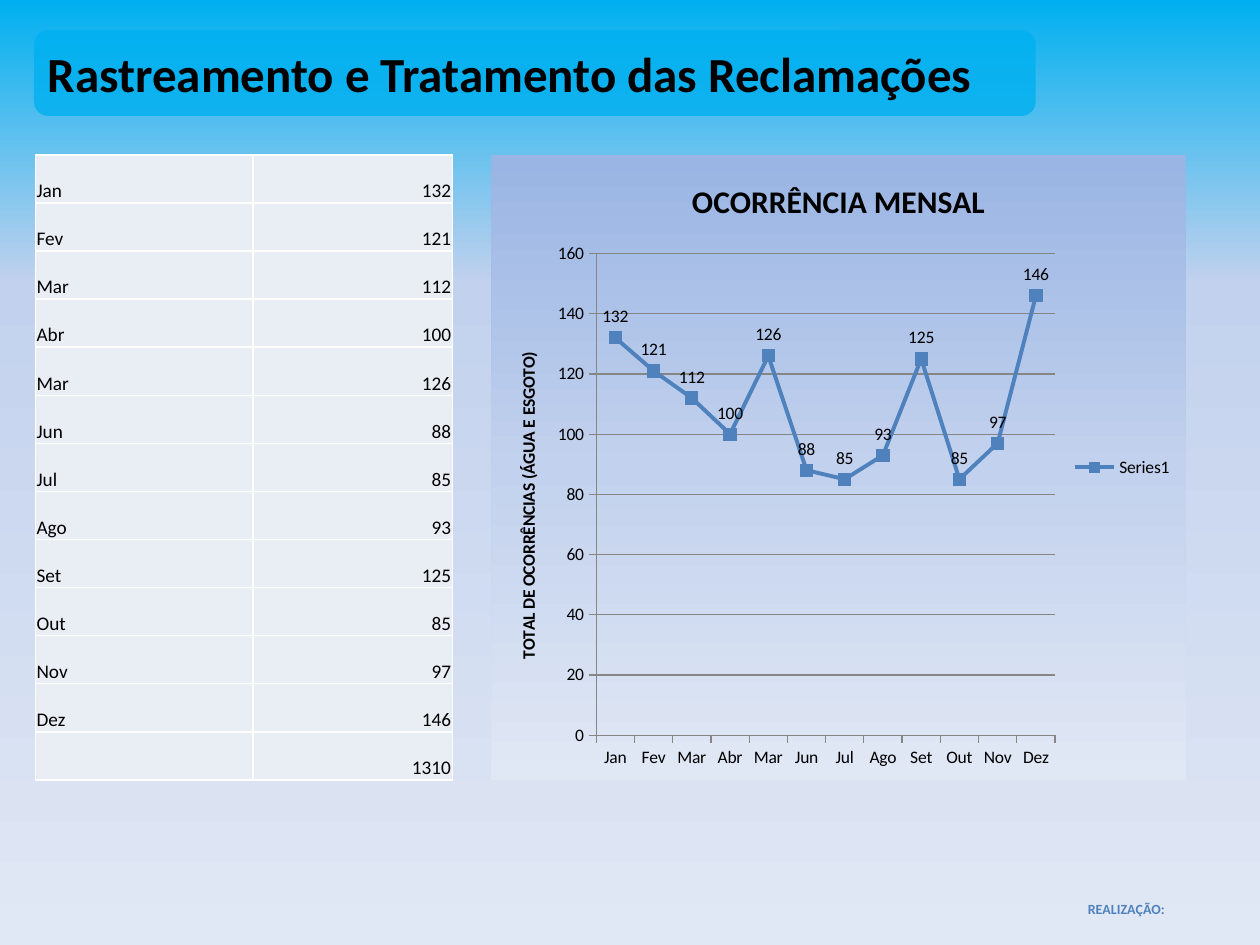
"""Build the monthly complaints slide with its table and line chart."""
from dataclasses import dataclass

from lxml import etree
from pptx import Presentation
from pptx.chart.data import CategoryChartData
from pptx.dml.color import RGBColor
from pptx.enum.chart import XL_CHART_TYPE as ChartType
from pptx.enum.chart import XL_LABEL_POSITION as LabelPos
from pptx.enum.chart import XL_LEGEND_POSITION as LegendPos
from pptx.enum.chart import XL_MARKER_STYLE as Marker
from pptx.enum.chart import XL_TICK_MARK as Tick
from pptx.enum.shapes import MSO_SHAPE as Shape
from pptx.enum.text import MSO_ANCHOR as Anchor
from pptx.enum.text import PP_ALIGN as Align
from pptx.oxml import parse_xml
from pptx.oxml.ns import nsdecls, qn
from pptx.util import Inches, Pt

MONTHS = ["Jan", "Fev", "Mar", "Abr", "Mar", "Jun",
          "Jul", "Ago", "Set", "Out", "Nov", "Dez"]
COMPLAINTS = [132, 121, 112, 100, 126, 88, 85, 93, 125, 85, 97, 146]


@dataclass(frozen=True)
class Theme:
    font: str = "Calibri"
    ink: str = "000000"
    banner: str = "00B0F0"
    accent: str = "4F81BD"
    cell: str = "E9EDF4"
    border: str = "FFFFFF"
    axis: str = "868686"
    page: tuple = ((0, "00B0F0"), (30, "C2D1ED"), (100, "E1E8F5"))
    panel: tuple = ((0, "9AB5E4"), (50, "C2D1ED"), (100, "E1E8F5"))
    title_size: int = 28
    chart_title_size: int = 18
    cell_size: int = 11
    chart_size: int = 10
    credit_size: int = 8


def gradient(stops):
    marks = "".join(f'<a:gs pos="{position * 1000}"><a:srgbClr val="{color}"/></a:gs>'
                    for position, color in stops)
    return (f'<a:gradFill {nsdecls("a")} rotWithShape="1"><a:gsLst>{marks}</a:gsLst>'
            '<a:lin ang="5400000" scaled="0"/></a:gradFill>')


class SlideBuilder:
    def __init__(self, slide, theme):
        self.slide, self.theme = slide, theme

    def style(self, font, size, bold=False, color=None):
        font.name, font.size, font.bold = self.theme.font, Pt(size), bold
        font.color.rgb = RGBColor.from_string(color or self.theme.ink)

    def background(self):
        fill = self.slide.background.fill
        fill.solid()
        solid = self.slide.element.find(f".//{qn('p:bgPr')}/{qn('a:solidFill')}")
        solid.getparent().replace(solid, parse_xml(gradient(self.theme.page)))

    def banner(self, *box, opacity):
        banner = self.slide.shapes.add_shape(Shape.ROUNDED_RECTANGLE, *map(Inches, box))
        banner.shadow.inherit = False
        banner.fill.solid()
        banner.fill.fore_color.rgb = RGBColor.from_string(self.theme.banner)
        color = banner.element.spPr.find(f".//{qn('a:srgbClr')}")
        etree.SubElement(color, qn("a:alpha"), val=str(opacity * 1000))
        banner.line.fill.background()

    def title(self, text, *box):
        title = self.slide.shapes.title
        title.left, title.top, title.width, title.height = map(Inches, box)
        frame = title.text_frame
        frame.text = text
        frame.vertical_anchor = Anchor.MIDDLE
        paragraph = frame.paragraphs[0]
        paragraph.alignment = Align.LEFT
        self.style(paragraph.runs[0].font, self.theme.title_size, bold=True)
        title.element.getparent().append(title.element)

    def credit(self, text, *box):
        frame = self.slide.shapes.add_textbox(*map(Inches, box)).text_frame
        frame.word_wrap = True
        frame.text = text
        paragraph = frame.paragraphs[0]
        paragraph.alignment = Align.CENTER
        self.style(paragraph.runs[0].font, self.theme.credit_size, True, self.theme.accent)

    def cell(self, cell, text, alignment):
        cell.margin_left = cell.margin_top = cell.margin_right = Inches(0.01)
        cell.margin_bottom = 0
        cell.vertical_anchor = Anchor.BOTTOM
        cell.fill.solid()
        cell.fill.fore_color.rgb = RGBColor.from_string(self.theme.cell)
        properties = cell._tc.get_or_add_tcPr()
        for index, side in enumerate(("lnL", "lnR", "lnT", "lnB")):
            properties.insert(index, parse_xml(
                f'<a:{side} {nsdecls("a")} w="{Pt(1)}"><a:solidFill>'
                f'<a:srgbClr val="{self.theme.border}"/></a:solidFill></a:{side}>'))
        cell.text_frame.text = text
        paragraph = cell.text_frame.paragraphs[0]
        paragraph.alignment = alignment
        for run in paragraph.runs:
            self.style(run.font, self.theme.cell_size)

    def table(self, rows, widths, *box):
        table = self.slide.shapes.add_table(len(rows), len(widths), *map(Inches, box)).table
        table.first_row = table.horz_banding = False
        for column, width in zip(table.columns, widths):
            column.width = Inches(width)
        for row, (month, count) in zip(table.rows, rows):
            row.height = Inches(box[3] / len(rows))
            self.cell(row.cells[0], month, Align.LEFT)
            self.cell(row.cells[1], str(count), Align.RIGHT)

    def heading(self, owner, text, size):
        frame = owner.text_frame
        frame.text = text
        self.style(frame.paragraphs[0].runs[0].font, size, bold=True)

    def axis_line(self, line):
        line.color.rgb = RGBColor.from_string(self.theme.axis)
        line.width = Pt(0.75)

    def line_chart(self, title, axis_title, *box):
        data = CategoryChartData()
        data.categories = MONTHS
        data.add_series("Series1", COMPLAINTS)
        chart = self.slide.shapes.add_chart(
            ChartType.LINE_MARKERS, *map(Inches, box), data).chart
        self.style(chart.font, self.theme.chart_size)
        chart.element.find(qn("c:txPr")).addprevious(parse_xml(
            f'<c:spPr {nsdecls("c", "a")}>{gradient(self.theme.panel)}'
            '<a:ln><a:noFill/></a:ln></c:spPr>'))
        chart.has_title = True
        self.heading(chart.chart_title, title, self.theme.chart_title_size)
        chart.has_legend = True
        chart.legend.position = LegendPos.RIGHT
        chart.legend.include_in_layout = False

        for axis in (chart.category_axis, chart.value_axis):
            axis.major_tick_mark, axis.minor_tick_mark = Tick.OUTSIDE, Tick.NONE
            self.axis_line(axis.format.line)
        counts = chart.value_axis
        counts.minimum_scale, counts.maximum_scale, counts.major_unit = 0, 160, 20
        counts.has_major_gridlines = True
        self.axis_line(counts.major_gridlines.format.line)
        self.heading(counts.axis_title, axis_title, self.theme.chart_size)

        plot = chart.plots[0]
        plot.vary_by_categories = False
        series = plot.series[0]
        series.smooth = False
        accent = RGBColor.from_string(self.theme.accent)
        series.format.line.color.rgb = accent
        series.format.line.width = Pt(2.25)
        series.marker.style, series.marker.size = Marker.SQUARE, 7
        series.marker.format.fill.solid()
        series.marker.format.fill.fore_color.rgb = accent
        series.marker.format.line.color.rgb = accent
        labels = series.data_labels
        labels.show_value, labels.position = True, LabelPos.ABOVE
        self.style(labels.font, self.theme.chart_size)


def main():
    deck = Presentation()
    deck.slide_width, deck.slide_height = Inches(10), Inches(7.5)
    builder = SlideBuilder(deck.slides.add_slide(deck.slide_layouts[5]), Theme())
    builder.background()
    builder.banner(0.27, 0.24, 7.95, 0.68, opacity=80)
    builder.credit("REALIZAÇÃO:", 8.46, 7.1, 0.96, 0.24)
    builder.title("Rastreamento e Tratamento das Reclamações", 0.28, 0.29, 8.27, 0.57)
    rows = [*zip(MONTHS, COMPLAINTS), ("", sum(COMPLAINTS))]
    builder.table(rows, (1.73, 1.58), 0.28, 1.23, 3.31, 4.96)
    builder.line_chart("OCORRÊNCIA MENSAL", "TOTAL DE OCORRÊNCIAS (ÁGUA E ESGOTO)",
                       3.9, 1.23, 5.51, 4.96)
    deck.save("out.pptx")


if __name__ == "__main__":
    main()
